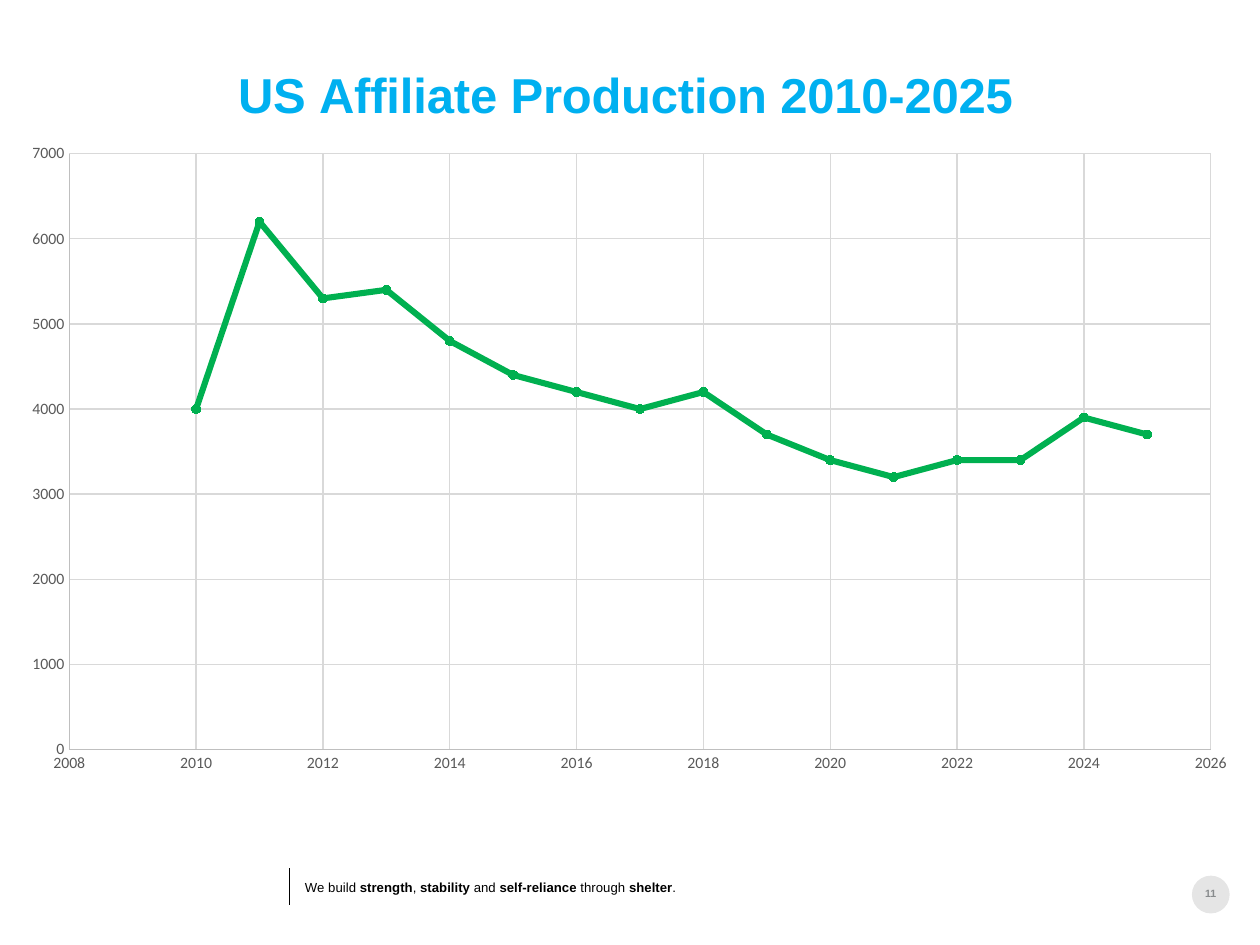
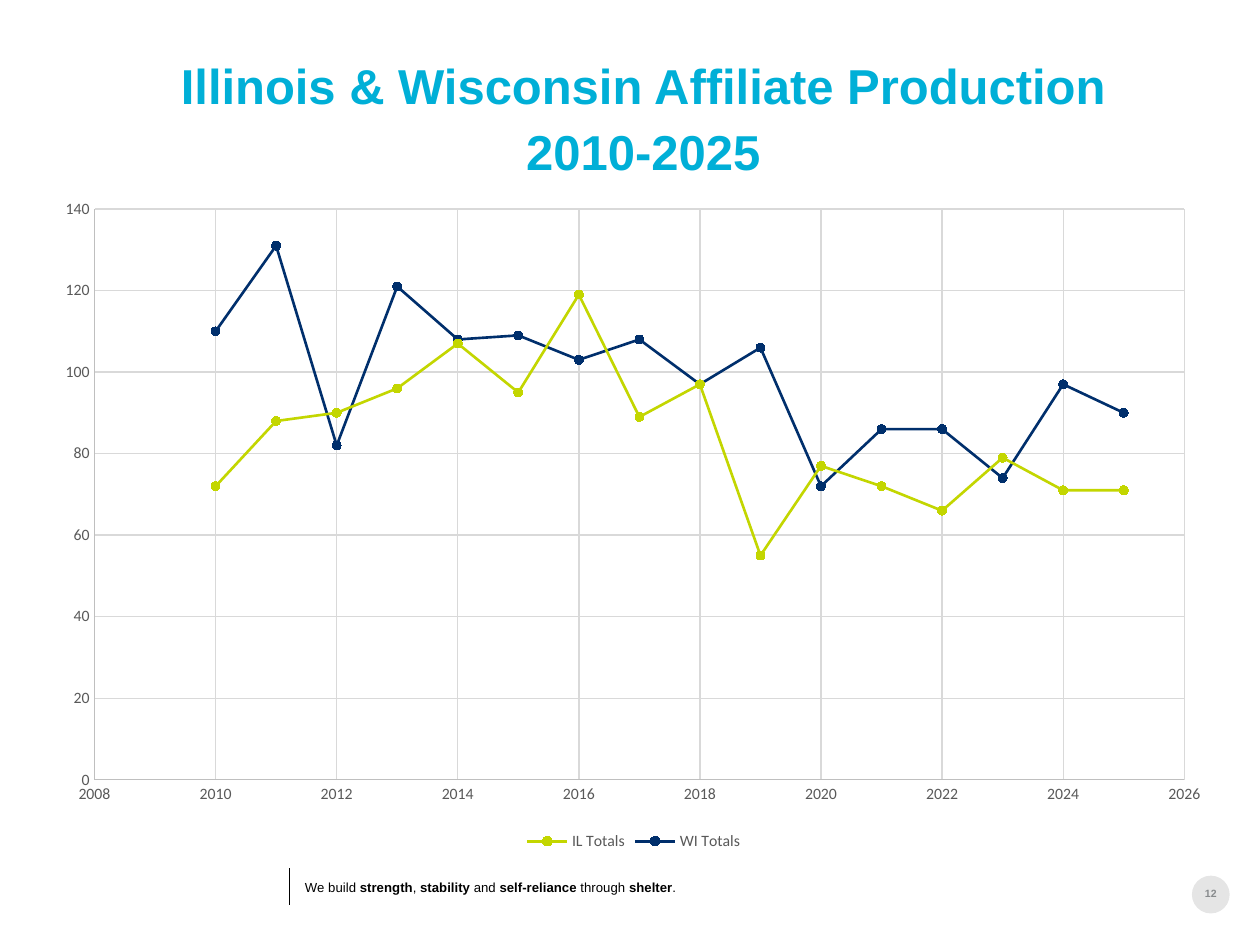
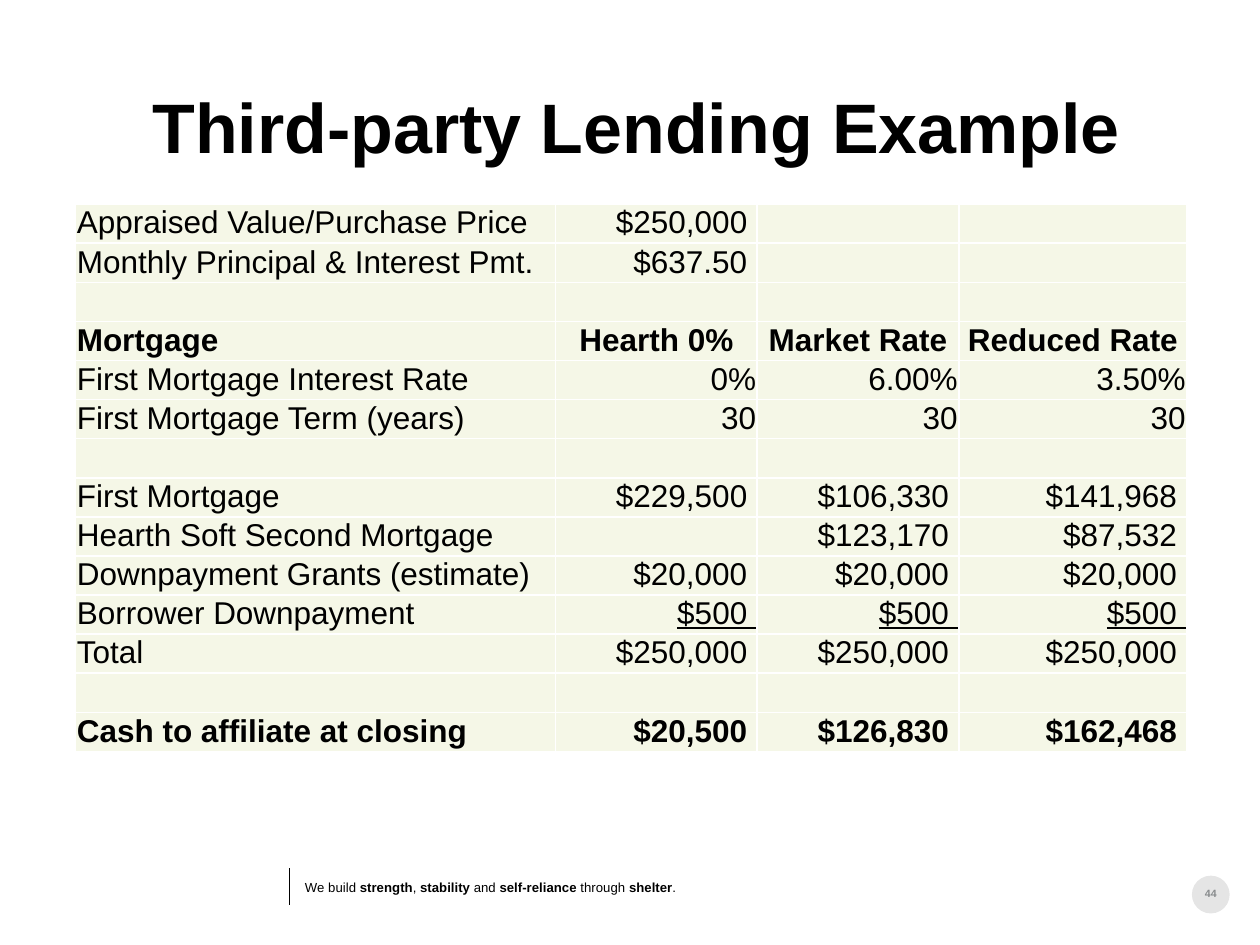
from lxml.etree import SubElement as Sub
from pptx import Presentation
from pptx.chart.data import XyChartData
from pptx.dml.color import RGBColor
from pptx.enum.chart import XL_CHART_TYPE as Kind, XL_LEGEND_POSITION as Place
from pptx.enum.chart import XL_MARKER_STYLE as Mark, XL_TICK_MARK as Tick
from pptx.enum.shapes import MSO_CONNECTOR as Link, MSO_SHAPE as Shape
from pptx.enum.text import PP_ALIGN as Align
from pptx.oxml.ns import qn
from pptx.util import Inches, Pt

BLACK = RGBColor(0x00, 0x00, 0x00)
WHITE = RGBColor(0xFF, 0xFF, 0xFF)
GRAY = RGBColor(0x88, 0x8B, 0x8D)
INK = RGBColor(0x59, 0x59, 0x59)
AXIS = RGBColor(0xBF, 0xBF, 0xBF)
GRID = RGBColor(0xD9, 0xD9, 0xD9)
SKY = RGBColor(0x00, 0xB0, 0xF0)
CYAN = RGBColor(0x00, 0xAF, 0xD7)
GREEN = RGBColor(0x00, 0xB0, 0x50)
LIME = RGBColor(0xC3, 0xD6, 0x00)
NAVY = RGBColor(0x00, 0x2F, 0x6C)
CREAM = RGBColor(0xF5, 0xF7, 0xE7)

MOTTO = "We build *strength*, *stability* and *self-reliance* through *shelter*."
YEARS = range(2010, 2026)
US = [4000, 6200, 5300, 5400, 4800, 4400, 4200, 4000,
      4200, 3700, 3400, 3200, 3400, 3400, 3900, 3700]
IL = [72, 88, 90, 96, 107, 95, 119, 89, 97, 55, 77, 72, 66, 79, 71, 71]
WI = [110, 131, 82, 121, 108, 109, 103, 108, 97, 106, 72, 86, 86, 74, 97, 90]
COLS = [3.81, 1.6, 1.6, 1.81]
HEAD, DOWN, CASH = 3, 10, 13
LOANS = [
    ["Appraised Value/Purchase Price", "$250,000 ", "", ""],
    ["Monthly Principal & Interest Pmt.", "$637.50 ", "", ""],
    [""] * 4,
    ["Mortgage", "Hearth 0%", "Market Rate", "Reduced Rate"],
    ["First Mortgage Interest Rate", "0%", "6.00%", "3.50%"],
    ["First Mortgage Term (years)", "30", "30", "30"],
    [""] * 4,
    ["First Mortgage", "$229,500 ", "$106,330 ", "$141,968 "],
    ["Hearth Soft Second Mortgage", "", "$123,170 ", "$87,532 "],
    ["Downpayment Grants (estimate)"] + ["$20,000 "] * 3,
    ["Borrower Downpayment"] + ["$500 "] * 3,
    ["Total"] + ["$250,000 "] * 3,
    [""] * 4,
    ["Cash to affiliate at closing", "$20,500 ", "$126,830 ", "$162,468 "],
]


def write(para, text, size=18, color=BLACK, bold=False, line=False,
          align=Align.LEFT, space=None):
    para.alignment = align
    if space:
        para.line_spacing = space
    for i, part in enumerate(text.split("*")):
        run = para.add_run()
        run.text = part
        font = run.font
        font.name, font.size = "Arial", Pt(size)
        font.bold, font.underline = bold or i % 2 == 1, line
        font.color.rgb = color


def style(font, size, color):
    font.name, font.size, font.bold = "Calibri", Pt(size), False
    font.color.rgb = color


def stroke(line, color, width):
    line.color.rgb, line.width = color, Pt(width)


def locate(node, index, frame, box):
    old = node.find(qn("c:layout"))
    if old is not None:
        node.remove(old)
    layout = Sub(node, qn("c:layout"))
    node.insert(index, layout)
    manual = Sub(layout, qn("c:manualLayout"))
    if len(box) == 4:
        Sub(manual, qn("c:layoutTarget")).set("val", "inner")
    for key in ("xMode", "yMode"):
        Sub(manual, qn("c:" + key)).set("val", "edge")
    shares = ((box[0] - frame[0]) / frame[2], (box[1] - frame[1]) / frame[3],
              *(size / full for size, full in zip(box[2:], frame[2:])))
    for key, share in zip("xywh", shares):
        Sub(manual, qn("c:" + key)).set("val", f"{share:.4f}")


class Deck:
    def __init__(self):
        self.show = Presentation()
        self.show.slide_width, self.show.slide_height = Inches(10), Inches(7.5)

    def page(self, number):
        self.slide = self.show.slides.add_slide(self.show.slide_layouts[6])
        self.shapes = self.slide.shapes
        self.badge(9.46, 6.95, 0.3)
        self.text(9.48, 7.04, 0.26, 0.11, [str(number)], size=6, color=GRAY,
                  bold=True, align=Align.CENTER)
        self.rule(2.3, 6.89, 7.18)
        self.text(2.42, 7, 3.78, 0.1, [MOTTO], size=7.5, space=0.8)

    def badge(self, x, y, size):
        dot = self.shapes.add_shape(Shape.OVAL, *map(Inches, (x, y, size, size)))
        dot.shadow.inherit = False
        dot.fill.solid()
        dot.fill.fore_color.rgb = BLACK
        dot.line.fill.background()
        tint = dot.fill._xPr.find(".//" + qn("a:srgbClr"))
        Sub(tint, qn("a:alpha")).set("val", "10000")

    def rule(self, x, top, end):
        line = self.shapes.add_connector(Link.STRAIGHT, *map(Inches, (x, top, x, end)))
        stroke(line.line, BLACK, 0.5)
        Sub(line._element.spPr, qn("a:effectLst"))

    def text(self, x, y, w, h, lines, gap=0, **form):
        frame = self.shapes.add_textbox(*map(Inches, (x, y, w, h))).text_frame
        frame.word_wrap = True
        frame.margin_left = frame.margin_right = 0
        frame.margin_top = frame.margin_bottom = 0
        for i, line in enumerate(lines):
            para = frame.add_paragraph() if i else frame.paragraphs[0]
            if i and gap:
                para.space_before = Pt(gap)
            write(para, line, **form)

    def chart(self, frame, plot, series, width, top, step, title=None):
        data = XyChartData()
        for name, values, color in series:
            points = data.add_series(name)
            for year, value in zip(YEARS, values):
                points.add_data_point(year, value)
        chart = self.shapes.add_chart(Kind.XY_SCATTER_LINES,
                                      *map(Inches, frame), data).chart
        style(chart.font, 10, BLACK)
        self.axis(chart.category_axis, 2008, 2026, 2)
        self.axis(chart.value_axis, 0, top, step)
        chart.plots[0].vary_by_categories = False
        for item, (name, values, color) in zip(chart.plots[0].series, series):
            item.smooth = False
            stroke(item.format.line, color, width)
            item.marker.style, item.marker.size = Mark.CIRCLE, 5
            item.marker.format.fill.solid()
            item.marker.format.fill.fore_color.rgb = color
            stroke(item.marker.format.line, color, 0.75)
        chart.has_legend = len(series) > 1
        if chart.has_legend:
            chart.legend.position = Place.BOTTOM
            chart.legend.include_in_layout = False
            style(chart.legend.font, 9, INK)
        chart.has_title = bool(title)
        if title:
            write(chart.chart_title.text_frame.paragraphs[0], title, size=28,
                  color=SKY, bold=True, align=Align.CENTER)
            locate(chart.chart_title._element, 1, frame, (1.82, 0.44))
        area = chart._chartSpace.find(".//" + qn("c:plotArea"))
        locate(area, 0, frame, plot)

    def axis(self, axis, low, high, step):
        axis.minimum_scale, axis.maximum_scale = low, high
        axis.major_unit = step
        axis.major_tick_mark = axis.minor_tick_mark = Tick.NONE
        axis.has_major_gridlines = True
        stroke(axis.major_gridlines.format.line, GRID, 0.75)
        stroke(axis.format.line, AXIS, 0.75)
        style(axis.tick_labels.font, 9, INK)

    def table(self, x, y, w, h, rows):
        table = self.shapes.add_table(len(rows), len(COLS),
                                      *map(Inches, (x, y, w, h))).table
        table.first_row = table.horz_banding = False
        for col, width in zip(table.columns, COLS):
            col.width = Inches(width)
        for r, row in enumerate(rows):
            table.rows[r].height = Inches(h / len(rows))
            for c, text in enumerate(row):
                side = Align.CENTER if r == HEAD else Align.RIGHT
                self.cell(table.cell(r, c), text, bold=r in (HEAD, CASH),
                          line=r == DOWN and c > 0,
                          align=side if c else Align.LEFT)

    def cell(self, cell, text, **form):
        cell.margin_left = cell.margin_right = cell.margin_top = Inches(0.01)
        cell.margin_bottom = 0
        props = cell._tc.get_or_add_tcPr()
        for side in "LRTB":
            edge = Sub(props, qn("a:ln" + side), w=str(Pt(1)))
            fill = Sub(edge, qn("a:solidFill"))
            Sub(fill, qn("a:srgbClr"), val=str(WHITE))
        cell.fill.solid()
        cell.fill.fore_color.rgb = CREAM
        write(cell.text_frame.paragraphs[0], text, **form)


def main():
    deck = Deck()
    deck.page(11)
    deck.chart((0.06, 0.32, 9.88, 5.93), (0.55, 1.22, 9.06, 4.73),
               [("Series 1", US, GREEN)], 3.5, 7000, 1000,
               "US Affiliate Production 2010-2025")

    deck.page(12)
    deck.text(0.71, 0.49, 8.79, 1.08,
              ["Illinois & Wisconsin Affiliate Production", "2010-2025"],
              gap=7.5, size=28, color=CYAN, bold=True, align=Align.CENTER,
              space=0.9)
    deck.chart((0.34, 1.48, 9.38, 5.31), (0.75, 1.66, 8.65, 4.53),
               [("IL Totals", IL, LIME), ("WI Totals", WI, NAVY)], 1.5, 140, 20)

    deck.page(44)
    deck.text(0.69, 0.66, 8.72, 1, ["Third-party Lending Example"], size=40,
              bold=True, align=Align.CENTER)
    deck.table(0.6, 1.62, 8.82, 4.25, LOANS)
    deck.show.save("out.pptx")


if __name__ == "__main__":
    main()
